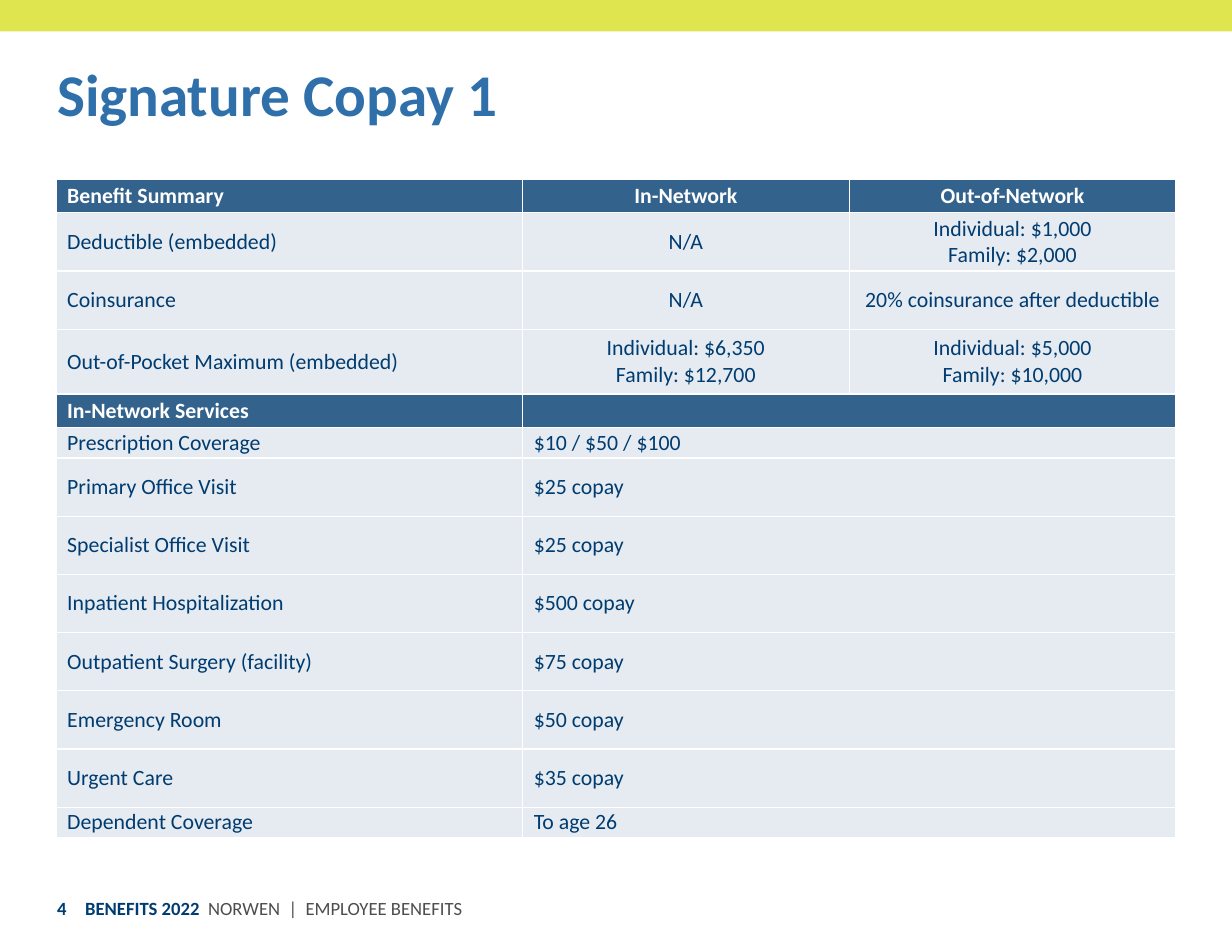
from lxml.etree import SubElement
from pptx import Presentation
from pptx.dml.color import RGBColor
from pptx.enum.shapes import MSO_SHAPE
from pptx.enum.text import MSO_ANCHOR, PP_ALIGN
from pptx.oxml.ns import qn
from pptx.util import Inches, Pt

# Content
TITLE = "Signature Copay 1"
HEADINGS = ("Benefit Summary", "In-Network", "Out-of-Network")
SECTION = "In-Network Services"
# (row height, cells); two cells mean that the second spans two columns
ROWS = [
    (0.3, HEADINGS),
    (0.52, ("Deductible (embedded)", "N/A", "Individual: $1,000\nFamily: $2,000")),
    (0.52, ("Coinsurance", "N/A", "20% coinsurance after deductible")),
    (0.58, ("Out-of-Pocket Maximum (embedded)",
            "Individual: $6,350\nFamily: $12,700",
            "Individual: $5,000\nFamily: $10,000")),
    (0.3, (SECTION, "")),
    (0.27, ("Prescription Coverage", "$10 / $50 / $100")),
    (0.52, ("Primary Office Visit", "$25 copay")),
    (0.52, ("Specialist Office Visit", "$25 copay")),
    (0.52, ("Inpatient Hospitalization", "$500 copay")),
    (0.52, ("Outpatient Surgery (facility)", "$75 copay")),
    (0.52, ("Emergency Room", "$50 copay")),
    (0.52, ("Urgent Care", "$35 copay")),
    (0.27, ("Dependent Coverage", "To age 26")),
]
PAGE = [("4", "navy", True)]
FOOTER = [("BENEFITS 2022  ", "navy", True),
          ("NORWEN  |  EMPLOYEE BENEFITS", "gray", False)]

# Style and layout
COLORS = {"lime": "D7DF24", "blue": "2F70AA", "navy": "003C71",
          "gray": "4D4D4E", "white": "FFFFFF"}
FONT = "Calibri"
WIDTH, HEIGHT = 11, 8.5
MARGIN = 0.5
TEXT_LEFT = 0.51
TABLE_TOP = 1.6
TABLE_WIDTH = WIDTH - 2 * MARGIN
COLUMN_SHARES = (0.4166, 0.2917, 0.2917)


def color(name):
    return RGBColor.from_string(COLORS[name])


def set_fill(fill, parent, name, opacity):
    fill.solid()
    fill.fore_color.rgb = color(name)
    srgb = parent.find(qn("a:solidFill")).find(qn("a:srgbClr"))
    SubElement(srgb, qn("a:alpha"), val=str(opacity * 1000))


def add_run(p, text, size, name, bold):
    r = p.add_run()
    r.text = text
    r.font.name = FONT
    r.font.size = Pt(size)
    r.font.bold = bold
    r.font.color.rgb = color(name)


def set_borders(cell, sides):
    tc_pr = cell._tc.get_or_add_tcPr()
    for side in sides:
        ln = SubElement(tc_pr, qn(f"a:ln{side}"), w=str(Pt(1)))
        fill = SubElement(ln, qn("a:solidFill"))
        SubElement(fill, qn("a:srgbClr"), val=COLORS["white"])


def format_cell(cell, text, heading, centered, sides):
    cell.vertical_anchor = MSO_ANCHOR.MIDDLE
    cell.margin_right = cell.margin_top = cell.margin_bottom = 0
    cell.margin_left = 0 if centered else Inches(0.1)
    set_borders(cell, sides)
    set_fill(cell.fill, cell._tc.tcPr, "navy", 80 if heading else 10)
    tf = cell.text_frame
    for i, line in enumerate(text.split("\n")):
        p = tf.add_paragraph() if i else tf.paragraphs[0]
        p.alignment = PP_ALIGN.CENTER if centered else PP_ALIGN.LEFT
        if line:
            add_run(p, line, 14, "white" if heading else "navy", heading)
        else:
            SubElement(p._p, qn("a:endParaRPr"), sz="1400")


def add_footer_text(s, left, width, runs):
    tf = s.shapes.add_textbox(Inches(left), Inches(7.88),
                              Inches(width), Inches(0.45)).text_frame
    tf.word_wrap = True
    tf.vertical_anchor = MSO_ANCHOR.MIDDLE
    tf.margin_left = tf.margin_right = 0
    for text, name, bold in runs:
        add_run(tf.paragraphs[0], text, 12, name, bold)


def add_benefits_table(s):
    height = sum(h for h, _ in ROWS)
    table = s.shapes.add_table(len(ROWS), len(COLUMN_SHARES), Inches(MARGIN),
                               Inches(TABLE_TOP), Inches(TABLE_WIDTH),
                               Inches(height)).table
    for column, share in zip(table.columns, COLUMN_SHARES):
        column.width = Inches(TABLE_WIDTH * share)
    last_row, last_col = len(ROWS) - 1, len(COLUMN_SHARES) - 1
    for row, (h, cells) in enumerate(ROWS):
        table.rows[row].height = Inches(h)
        spans = len(cells) == 2
        if spans:
            table.cell(row, 1).merge(table.cell(row, 2))
        heading = cells[0] in (HEADINGS[0], SECTION)
        for col in range(last_col + 1):
            text = cells[col] if col < len(cells) else ""
            # Inner grid lines, plus the top edge
            sides = (("L" if col else "") + ("R" if col < last_col else "")
                     + "T" + ("B" if row < last_row else ""))
            format_cell(table.cell(row, col), text, heading,
                        col > 0 and not spans, sides)


def main():
    prs = Presentation()
    prs.slide_width, prs.slide_height = Inches(WIDTH), Inches(HEIGHT)
    s = prs.slides.add_slide(prs.slide_layouts[5])

    # Top band
    band = s.shapes.add_shape(MSO_SHAPE.RECTANGLE, 0, 0,
                              prs.slide_width, Inches(0.28))
    band.shadow.inherit = False
    band.line.fill.background()
    set_fill(band.fill, band._element.spPr, "lime", 80)

    # Title
    title = s.shapes.title
    title.left, title.top = Inches(TEXT_LEFT), Inches(0.47)
    title.width, title.height = Inches(7.61), Inches(0.72)
    tf = title.text_frame
    tf.margin_left = tf.margin_right = tf.margin_top = tf.margin_bottom = 0
    tf.vertical_anchor = MSO_ANCHOR.MIDDLE
    tf.paragraphs[0].alignment = PP_ALIGN.LEFT
    add_run(tf.paragraphs[0], TITLE, 38, "blue", True)

    add_benefits_table(s)

    # Footer
    add_footer_text(s, 0.76, 4.39, FOOTER)
    add_footer_text(s, TEXT_LEFT, 0.49, PAGE)

    prs.save("out.pptx")


if __name__ == "__main__":
    main()
